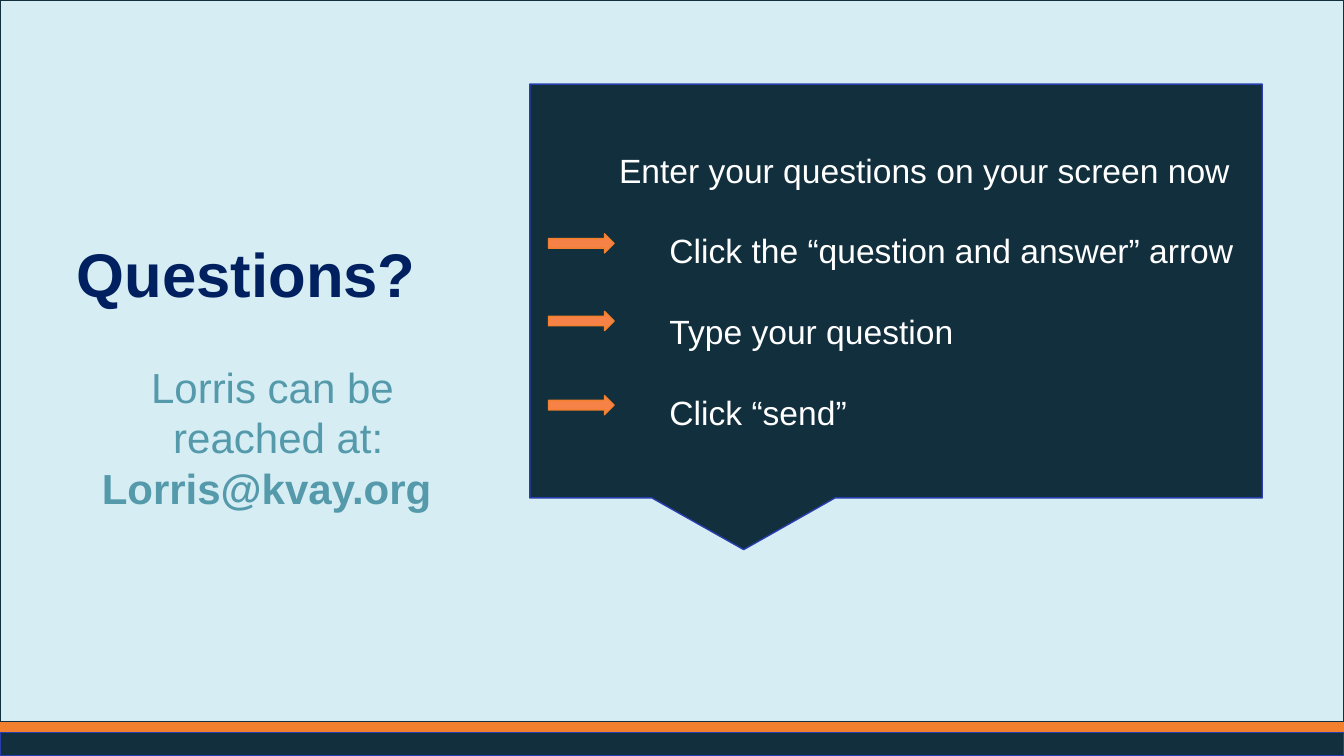
import pptx
import pptx.dml.color
import pptx.enum.shapes
import pptx.enum.text
import pptx.util

RGBColor = pptx.dml.color.RGBColor
Pt = pptx.util.Pt
MSO_SHAPE = pptx.enum.shapes.MSO_SHAPE
PP_ALIGN = pptx.enum.text.PP_ALIGN

SLIDE_WIDTH = pptx.util.Inches(26.66)
SLIDE_HEIGHT = pptx.util.Inches(15)
FONT = "Arial"
LINE_RATIO = 1.2

ORANGE = RGBColor(0xF2, 0x80, 0x2E)
LIGHT_ORANGE = RGBColor(0xF7, 0x82, 0x47)
DARK_TEAL = RGBColor(0x11, 0x2F, 0x3D)
PALE_BLUE = RGBColor(0xD6, 0xED, 0xF4)
ROYAL_BLUE = RGBColor(0x28, 0x3E, 0xAD)
NAVY = RGBColor(0x00, 0x20, 0x60)
TEAL = RGBColor(0x54, 0x9A, 0xAB)
WHITE = RGBColor(0xFF, 0xFF, 0xFF)


def place(left, top, width, height):
    """Turn percentages of the slide into lengths."""
    return (
        int(SLIDE_WIDTH * left / 100),
        int(SLIDE_HEIGHT * top / 100),
        int(SLIDE_WIDTH * width / 100),
        int(SLIDE_HEIGHT * height / 100),
    )


def add_block(slide, kind, area, fill, outline=None):
    block = slide.shapes.add_shape(kind, *place(*area))
    block.shadow.inherit = False
    block.fill.solid()
    block.fill.fore_color.rgb = fill
    if outline is None:
        block.line.fill.background()
    else:
        block.line.color.rgb = outline
        block.line.width = Pt(2)
    return block


def add_lines(slide, area, lines, size, color, align=PP_ALIGN.LEFT):
    frame = slide.shapes.add_textbox(*place(*area)).text_frame
    frame.word_wrap = True
    for index, line in enumerate(lines):
        paragraph = frame.paragraphs[0] if index == 0 else frame.add_paragraph()
        paragraph.text = line
        paragraph.alignment = align
        paragraph.line_spacing = Pt(size * LINE_RATIO)
        paragraph.font.name = FONT
        paragraph.font.size = Pt(size)
        paragraph.font.color.rgb = color
    return frame.paragraphs


def add_background(slide):
    add_block(slide, MSO_SHAPE.RECTANGLE, (0, 95.53, 100, 1.33), ORANGE)
    add_block(slide, MSO_SHAPE.RECTANGLE, (0, 96.87, 100, 3.13), DARK_TEAL, ROYAL_BLUE)
    add_block(slide, MSO_SHAPE.RECTANGLE, (0, 0, 100, 95.47), PALE_BLUE, DARK_TEAL)


def add_contact(slide):
    title = add_lines(slide, (5.36, 30.93, 70.71, 10.53), ["Questions?"], 88, NAVY)
    title[0].font.bold = True
    contact = add_lines(
        slide,
        (3.75, 47.47, 33.05, 34.33),
        ["Lorris can be", " reached at:", "Lorris@kvay.org "],
        60,
        TEAL,
        PP_ALIGN.CENTER,
    )
    contact[-1].font.bold = True


def add_instructions(slide):
    callout = add_block(
        slide,
        MSO_SHAPE.RECTANGULAR_CALLOUT,
        (39.42, 11.13, 54.5, 54.73),
        DARK_TEAL,
        ROYAL_BLUE,
    )
    callout.adjustments[0] = -0.208
    callout.adjustments[1] = 0.625

    size = 48
    heading, *steps = add_lines(
        slide,
        (45.69, 19.47, 50.83, 38.4),
        [
            "Enter your questions on your screen now",
            "Click the “question and answer” arrow",
            "Type your question",
            "Click “send”",
        ],
        size,
        WHITE,
    )
    for step in steps:
        step.space_before = Pt(size * LINE_RATIO)
        step._p.get_or_add_pPr().set("marL", str(pptx.util.Inches(1)))

    for top in (30.93, 41.2, 52.33):
        add_block(
            slide, MSO_SHAPE.RIGHT_ARROW, (40.81, top, 4.88, 2.53), LIGHT_ORANGE, ORANGE
        )


def main():
    deck = pptx.Presentation()
    deck.slide_width = SLIDE_WIDTH
    deck.slide_height = SLIDE_HEIGHT
    slide = deck.slides.add_slide(deck.slide_layouts[6])
    add_background(slide)
    add_contact(slide)
    add_instructions(slide)
    deck.save("out.pptx")


if __name__ == "__main__":
    main()
